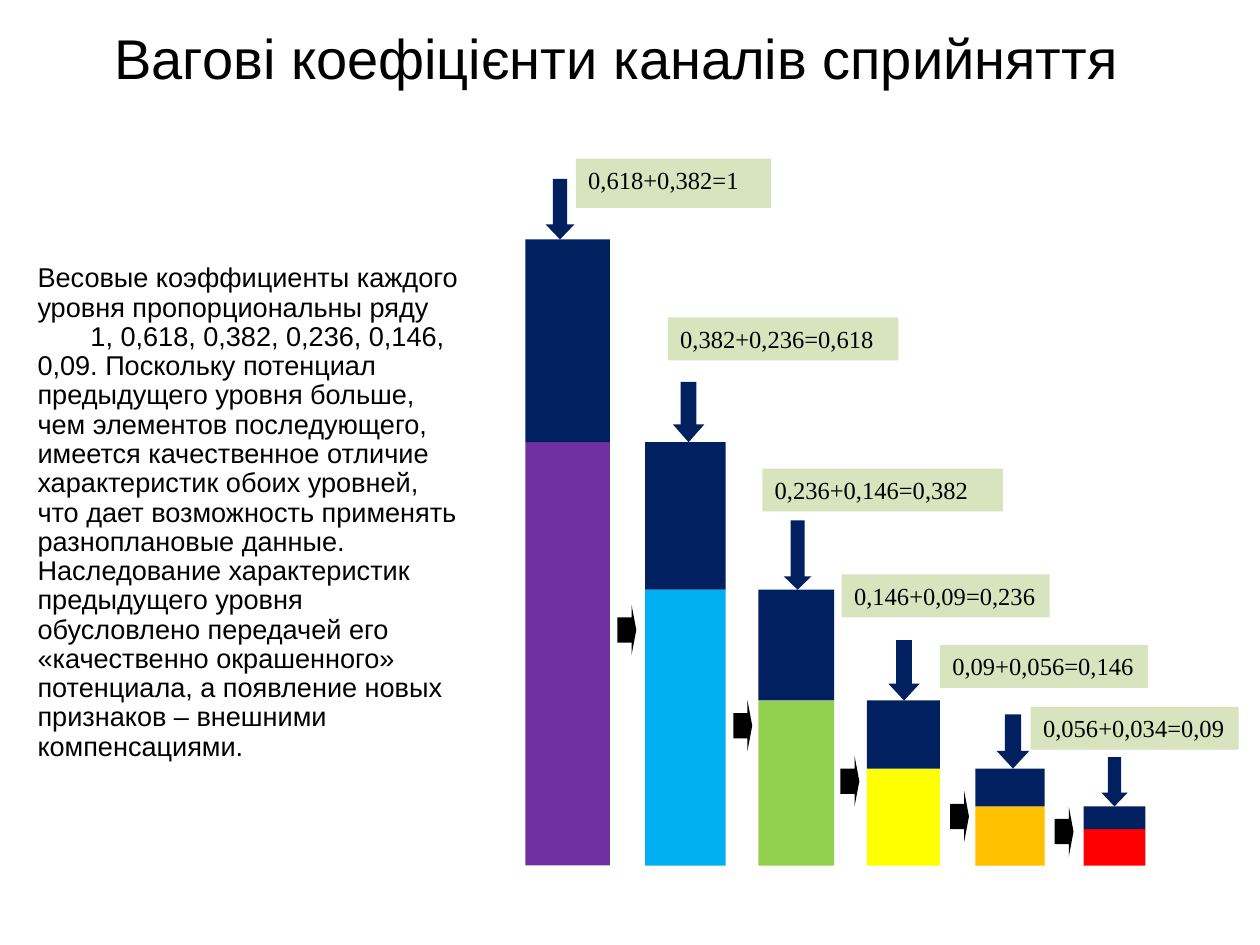
from pptx import Presentation, util as u
from pptx.dml.color import RGBColor
from pptx.enum import shapes, text

# Slide: a grid of 10 columns by 7.5 rows
COLS, ROWS = 10, 7.5
deck = Presentation()
deck.slide_width, deck.slide_height = u.Inches(COLS), u.Inches(ROWS)
unit = deck.slide_width / COLS
page = deck.slides.add_slide(deck.slide_layouts[6]).shapes
Kind = shapes.MSO_SHAPE
NAVY, GREEN, BLACK = "002060", "D7E4BD", "000000"


def block(kind, box, fill):
    """Add a plain shape; box is left, top, width, height in grid units."""
    shape = page.add_shape(kind, *[round(n * unit) for n in box])
    shape.shadow.inherit = False
    shape.fill.solid()
    shape.fill.fore_color.rgb = RGBColor.from_string(fill)
    shape.line.fill.background()
    return shape


def write(shape, lines, face, size, frame=None, para=None):
    """Fill a shape with paragraphs and apply the format values."""
    body = shape.text_frame
    body.text = "\n".join(lines)
    for key, val in {"word_wrap": True, "vertical_anchor": text.MSO_ANCHOR.TOP,
                     **(frame or {})}.items():
        setattr(body, key, val)
    for par in body.paragraphs:
        for key, val in {"alignment": text.PP_ALIGN.LEFT, **(para or {})}.items():
            setattr(par, key, val)
        for key, val in {"name": face, "size": u.Pt(size)}.items():
            setattr(par.font, key, val)
        par.font.color.rgb = RGBColor.from_string(BLACK)
    return body


# Title
title = page.add_textbox(*[round(n * unit) for n in (0.17, 0.29, 9.45, 0.48)])
write(title, ["Вагові коефіцієнти каналів сприйняття"], "Arial", 32,
      {"vertical_anchor": text.MSO_ANCHOR.BOTTOM},
      {"alignment": text.PP_ALIGN.CENTER})

# Explanation, with the number row set in from the left
note = page.add_textbox(*[round(n * unit) for n in (0.2, 2.05, 3.54, 4.1)])
body = write(note, [
    "Весовые коэффициенты каждого уровня пропорциональны ряду",
    "1, 0,618, 0,382, 0,236, 0,146, 0,09. Поскольку потенциал предыдущего "
    "уровня больше, чем элементов последующего, имеется качественное отличие "
    "характеристик обоих уровней, что дает возможность применять "
    "разноплановые данные. Наследование характеристик предыдущего уровня "
    "обусловлено передачей его «качественно окрашенного» потенциала, а "
    "появление новых признаков – внешними компенсациями.",
], "Arial", 15.5, para={"line_spacing": 0.9})
props = body.paragraphs[1]._p.get_or_add_pPr()
props.set("marL", "0")
props.set("indent", str(u.Inches(0.42)))

# Bars: each navy part ends where the next bar starts
BASE = 6.87
tops = [1.9, 3.51, 4.68, 5.56, 6.1, 6.4, 6.58]
bars = [  # left, width, colour
    (4.17, 0.67, "7030A0"), (5.12, 0.64, "00B0F0"), (6.02, 0.6, "92D050"),
    (6.88, 0.58, "FFFF00"), (7.74, 0.55, "FFC000"), (8.6, 0.49, "FF0000")]
for (left, wide, fill), top, cut in zip(bars, tops, tops[1:]):
    block(Kind.RECTANGLE, (left, cut, wide, BASE - cut), fill)
    block(Kind.RECTANGLE, (left, top, wide, cut - top), NAVY)

# Down arrows: each tip rests on its bar
downs = [  # left, width, height, head
    (4.33, 0.23, 0.48, 0.52), (5.34, 0.25, 0.48, 0.57), (6.22, 0.22, 0.55, 0.48),
    (7.05, 0.25, 0.48, 0.54), (7.91, 0.26, 0.43, 0.54), (8.74, 0.21, 0.39, 0.52)]
for (left, wide, high, head), top in zip(downs, tops):
    arrow = block(Kind.DOWN_ARROW, (left, top - high, wide, high), NAVY)
    arrow.adjustments[1] = head

# Right arrows between neighbouring bars
for left, top in [(4.9, 4.8), (5.82, 5.56), (6.67, 6), (7.54, 6.28), (8.37, 6.4)]:
    arrow = block(Kind.RIGHT_ARROW, (left, top, 0.15, 0.4), BLACK)
    arrow.adjustments[1] = 0.25

# Sum labels
sums = [
    ("0,618+0,382=1", 4.57, 1.26, 1.55, 0.39),
    ("0,382+0,236=0,618", 5.3, 2.52, 1.83, 0.34),
    ("0,236+0,146=0,382", 6.05, 3.72, 1.91, 0.34),
    ("0,146+0,09=0,236", 6.68, 4.56, 1.65, 0.34),
    ("0,09+0,056=0,146", 7.46, 5.12, 1.65, 0.34),
    ("0,056+0,034=0,09", 8.18, 5.61, 1.65, 0.34)]
for words, *box in sums:
    write(block(Kind.RECTANGLE, box, GREEN), [words], "Times New Roman", 14)

deck.save("out.pptx")
